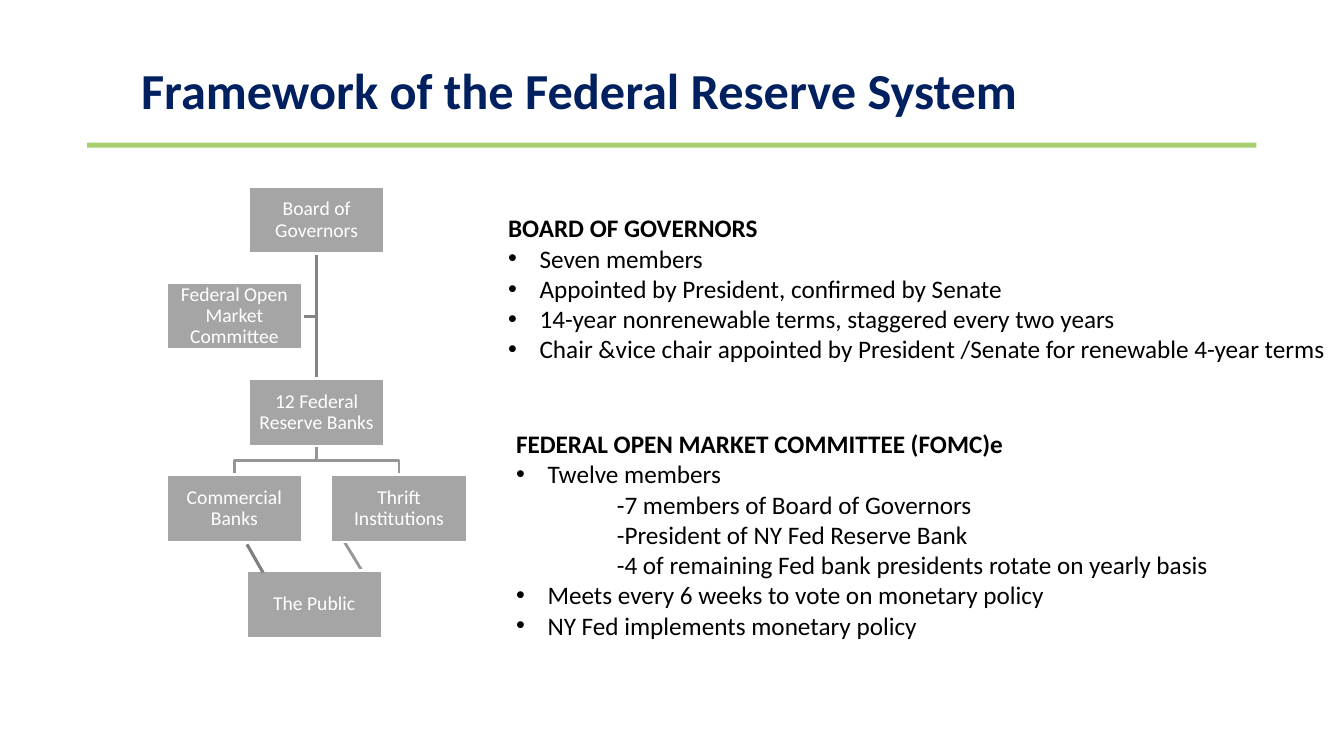
from dataclasses import dataclass

from lxml import etree
from pptx import Presentation
from pptx.dml.color import RGBColor
from pptx.enum import shapes, text
from pptx.oxml.ns import qn
from pptx.util import Pt


@dataclass(frozen=True)
class Theme:
    font: str = "Calibri"
    title_size: float = 36
    list_size: float = 18
    box_size: float = 14
    navy: str = "002060"
    green: str = "A7CE6F"
    black: str = "000000"
    white: str = "FFFFFF"
    box_gray: str = "A5A5A5"
    trunk_gray: str = "848484"
    branch_gray: str = "969696"
    public_gray: str = "808080"


THEME = Theme()

TITLE = "Framework of the Federal Reserve System"
# Each list: (left, top, width, height), then (style, text) lines
LISTS = [
    ((359.3, 148.3, 594.7, 138.2), [
        ("heading", "BOARD OF GOVERNORS"),
        ("bullet", "Seven members"),
        ("bullet", "Appointed by President, confirmed by Senate"),
        ("bullet", "14-year nonrenewable terms, staggered every two years"),
        ("bullet", "Chair &vice chair appointed by President /Senate for renewable 4-year terms"),
    ]),
    ((365, 302.4, 536.4, 159.8), [
        ("heading", "FEDERAL OPEN MARKET COMMITTEE (FOMC)e"),
        ("bullet", "Twelve members"),
        ("detail", "-7 members of Board of Governors"),
        ("detail", "-President of NY Fed Reserve Bank"),
        ("detail", "-4 of remaining Fed bank presidents rotate on yearly basis"),
        ("bullet", "Meets every 6 weeks to vote on monetary policy"),
        ("bullet", "NY Fed implements monetary policy"),
    ]),
]
# Style: (left margin, first-line indent)
INDENTS = {"heading": (0, 0), "bullet": (22.5, -22.5), "detail": (72, 0)}

# Box: (column, row) in the chart grid
BOXES = {
    "Board of Governors": (1, 0),
    "Federal Open Market Committee": (0, 1),
    "12 Federal Reserve Banks": (1, 2),
    "Commercial Banks": (0, 3),
    "Thrift Institutions": (2, 3),
    "The Public": (0.97, 4),
}
CHART_LEFT, CHART_TOP = 118.8, 133.2
COLUMN_STEP, ROW_STEP = 58.8, 68.6
BOX_WIDTH, BOX_HEIGHT = 97.2, 48.2


def color(name):
    return RGBColor.from_string(name)


def box_corner(label):
    column, row = BOXES[label]
    return CHART_LEFT + column * COLUMN_STEP, CHART_TOP + row * ROW_STEP


def side(label, edge):
    """Middle of a box side, numbered like connection sites."""
    left, top = box_corner(label)
    across, down = [(0.5, 0), (0, 0.5), (0.5, 1), (1, 0.5)][edge]
    return left + across * BOX_WIDTH, top + down * BOX_HEIGHT


def place(shape, left, top, width, height):
    shape.left, shape.top, shape.width, shape.height = map(Pt, (left, top, width, height))


def style_font(font, size, ink, bold=False):
    font.name, font.size, font.bold = THEME.font, Pt(size), bold
    font.color.rgb = color(ink)


def set_frame(frame, inset, anchor):
    frame.margin_left = frame.margin_right = Pt(inset)
    frame.margin_top = frame.margin_bottom = Pt(inset)
    frame.vertical_anchor = anchor
    frame.word_wrap = True
    frame.auto_size = text.MSO_AUTO_SIZE.NONE


def fill_title(shape):
    place(shape, 97.2, 43.2, 720, 48.2)
    set_frame(shape.text_frame, 3.6, text.MSO_ANCHOR.TOP)
    paragraph = shape.text_frame.paragraphs[0]
    paragraph.text = TITLE
    paragraph.alignment = text.PP_ALIGN.LEFT
    paragraph.line_spacing = 0.9
    style_font(paragraph.font, THEME.title_size, THEME.navy, bold=True)


def fill_list(shape, bounds, lines):
    place(shape, *bounds)
    frame = shape.text_frame
    set_frame(frame, 3.6, text.MSO_ANCHOR.TOP)
    for number, (style, line) in enumerate(lines):
        paragraph = frame.add_paragraph() if number else frame.paragraphs[0]
        paragraph.text = line
        paragraph.space_before = paragraph.space_after = Pt(0)
        properties = paragraph._p.get_or_add_pPr()
        margin, indent = INDENTS[style]
        properties.set("marL", str(Pt(margin)))
        properties.set("indent", str(Pt(indent)))
        if style == "bullet":
            etree.SubElement(properties, qn("a:buFont")).set("typeface", "Arial")
            etree.SubElement(properties, qn("a:buChar")).set("char", "•")
        else:
            etree.SubElement(properties, qn("a:buNone"))
        style_font(paragraph.font, THEME.list_size, THEME.black, bold=style == "heading")


def add_line(slide, start, end, ink, width=2):
    line = slide.shapes.add_connector(
        shapes.MSO_CONNECTOR.STRAIGHT, *map(Pt, (*start, *end)))
    line.line.color.rgb = color(ink)
    line.line.width = Pt(width)
    etree.SubElement(line._element.spPr, qn("a:effectLst"))
    return line


def add_bend(slide, points, ink):
    corners = [(Pt(x), Pt(y)) for x, y in points]
    builder = slide.shapes.build_freeform(*corners[0])
    builder.add_line_segments(corners[1:], close=False)
    bend = builder.convert_to_shape()
    bend.shadow.inherit = False
    bend.fill.background()
    bend.line.color.rgb = color(ink)
    bend.line.width = Pt(2)


def add_box(slide, label):
    box = slide.shapes.add_shape(
        shapes.MSO_SHAPE.RECTANGLE, *map(Pt, (*box_corner(label), BOX_WIDTH, BOX_HEIGHT)))
    box.shadow.inherit = False
    box.fill.solid()
    box.fill.fore_color.rgb = color(THEME.box_gray)
    box.line.color.rgb = color(THEME.white)
    box.line.width = Pt(2)
    set_frame(box.text_frame, 0.7, text.MSO_ANCHOR.MIDDLE)
    paragraph = box.text_frame.paragraphs[0]
    paragraph.text = label
    paragraph.alignment = text.PP_ALIGN.CENTER
    paragraph.line_spacing = 0.9
    style_font(paragraph.font, THEME.box_size, THEME.white)
    return box


def add_chart_tree(slide):
    board, committee, banks = list(BOXES)[:3]
    trunk_top, trunk_end = side(board, 2), side(banks, 0)
    committee_side = side(committee, 3)
    add_bend(slide, [trunk_top, (trunk_top[0], committee_side[1]), committee_side],
             THEME.trunk_gray)
    add_line(slide, (246.2, 387.4), (272.9, 431.3), THEME.branch_gray)
    fork = side(banks, 2)
    for label in ("Thrift Institutions", "Commercial Banks"):
        end = side(label, 0)
        middle = (fork[1] + end[1]) / 2
        add_bend(slide, [fork, (fork[0], middle), (end[0], middle), end], THEME.branch_gray)
    trunk = add_line(slide, trunk_top, trunk_end, THEME.trunk_gray)
    boxes = {label: add_box(slide, label) for label in BOXES}
    trunk.begin_connect(boxes[board], 2)
    trunk.end_connect(boxes[banks], 0)
    add_line(slide, (176.4, 388.8), (187.9, 409), THEME.public_gray, 2.25)


def main():
    presentation = Presentation()
    presentation.slide_width, presentation.slide_height = Pt(960), Pt(540)
    slide = presentation.slides.add_slide(presentation.slide_layouts.get_by_name("Two Content"))
    title, *bodies = slide.placeholders
    fill_title(title)
    for body, (bounds, lines) in zip(bodies, LISTS):
        fill_list(body, bounds, lines)
    rule = slide.shapes.add_shape(
        shapes.MSO_SHAPE.RECTANGLE, *map(Pt, (62.2, 101.8, 835.2, 3.6)))
    rule.shadow.inherit = False
    rule.fill.solid()
    rule.fill.fore_color.rgb = color(THEME.green)
    rule.line.fill.background()
    add_chart_tree(slide)
    presentation.save("out.pptx")


if __name__ == "__main__":
    main()
